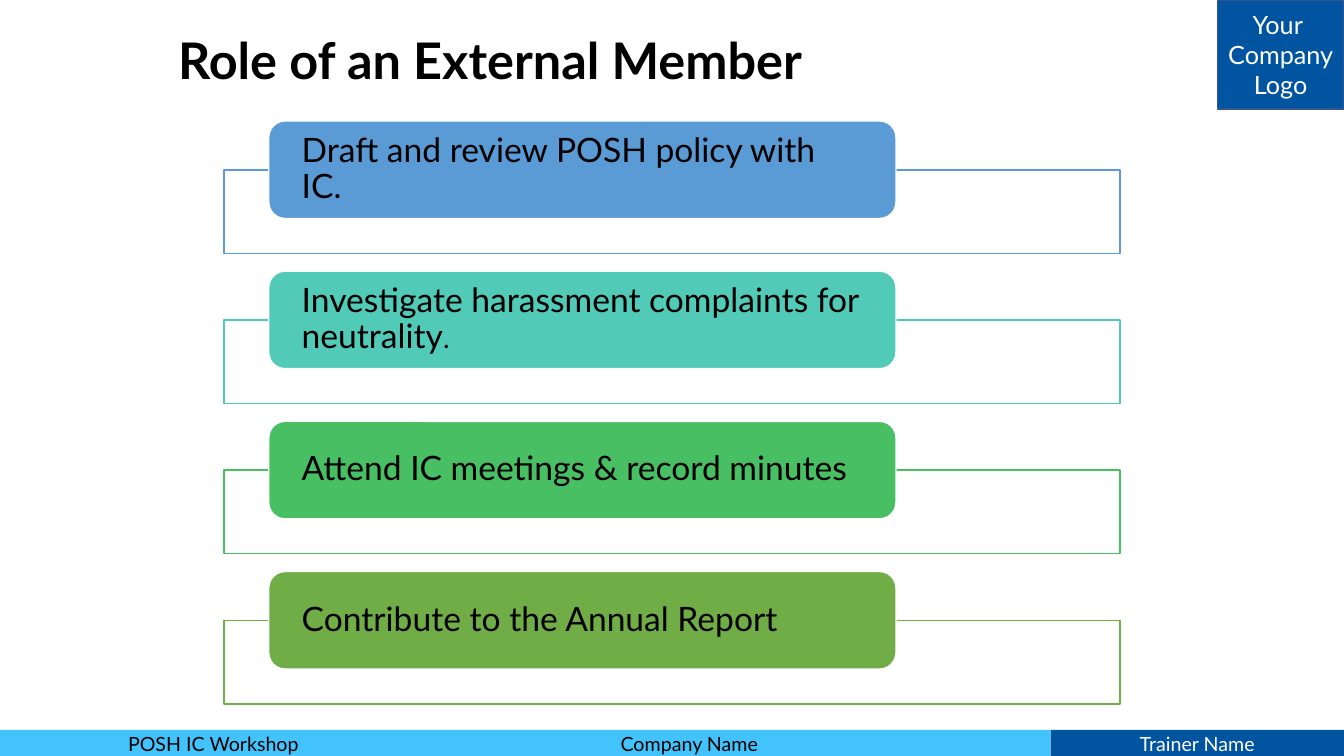
from dataclasses import dataclass

from pptx import Presentation
from pptx.dml.color import RGBColor
from pptx.enum.shapes import MSO_SHAPE
from pptx.enum.text import MSO_ANCHOR, PP_ALIGN
from pptx.util import Inches, Pt

# Grid: 12 columns by 30 rows
WIDE, HIGH = Inches(13.33), Inches(7.5)
COL, ROW = WIDE / 12, HIGH / 30


@dataclass(frozen=True)
class Theme:
    font: str = "Lato"
    black: str = "000000"
    white: str = "FFFFFF"
    navy: str = "01549F"
    edge: str = "325491"
    sky: str = "42C3FB"
    title: int = 36
    body: int = 24
    stop: int = 20
    logo: int = 18
    foot: int = 14


LOOK = Theme()

ROLES = [
    ("Draft and review POSH policy with IC.", "5B9BD5"),
    ([("Investigate harassment complaints for neutrality", LOOK.body),
      (".", LOOK.stop)], "52CAB8"),
    ("Attend IC meetings & record minutes", "49BF64"),
    ("Contribute to the Annual Report", "70AD47"),
]

# Start column, width in columns, text, left inset in inches, fill, ink
FOOTER = [
    (0, 4.92, "POSH IC Workshop", 1.27, LOOK.sky, LOOK.black),
    (4.92, 4.46, "Company Name", 0.69, LOOK.sky, LOOK.black),
    (9.38, 2.62, "Trainer Name", None, LOOK.navy, LOOK.white),
]


def grid(col, row, cols, rows):
    return [round(n) for n in (col * COL, row * ROW, cols * COL, rows * ROW)]


def write(shape, *lines, size, ink=LOOK.black, bold=False,
          align=PP_ALIGN.LEFT, inset=(0.1, 0.05, 0.1, 0.05), space=None):
    """Each line is a string, or a list of (string, size) pairs."""
    frame = shape.text_frame
    frame.word_wrap = True
    frame.vertical_anchor = MSO_ANCHOR.MIDDLE
    (frame.margin_left, frame.margin_top,
     frame.margin_right, frame.margin_bottom) = map(Inches, inset)
    for i, line in enumerate(lines):
        para = frame.add_paragraph() if i else frame.paragraphs[0]
        para.alignment = align
        para.line_spacing = space
        pairs = [(line, size)] if isinstance(line, str) else line
        for words, points in pairs:
            run = para.add_run()
            run.text = words
            run.font.name = LOOK.font
            run.font.size = Pt(points)
            run.font.bold = bold
            run.font.color.rgb = RGBColor.from_string(ink)


def block(slide, place, fill, line=None, kind=MSO_SHAPE.RECTANGLE):
    shape = slide.shapes.add_shape(kind, *place)
    shape.shadow.inherit = False
    shape.fill.solid()
    shape.fill.fore_color.rgb = RGBColor.from_string(fill)
    if line:
        shape.line.color.rgb = RGBColor.from_string(line)
        shape.line.width = Pt(1)
    else:
        shape.line.fill.background()
    return shape


def role(slide, row, words, hue):
    block(slide, grid(2, row + 1.94, 8, 3.32), LOOK.white, hue)
    pill = block(slide, grid(2.4, row, 5.6, 3.87), hue, LOOK.white,
                 MSO_SHAPE.ROUNDED_RECTANGLE)
    write(pill, words, size=LOOK.body, inset=(0.28, 0, 0.28, 0), space=0.9)


def main():
    deck = Presentation()
    deck.slide_width, deck.slide_height = WIDE, HIGH
    slide = deck.slides.add_slide(deck.slide_layouts[5])

    # Title
    title = slide.shapes.title
    title.left, title.top, title.width, title.height = grid(
        1.59, 1.12, 9.79, 2.48)
    write(title, "Role of an External Member", size=LOOK.title, bold=True,
          inset=(0, 0.07, 0, 0), space=0.9)

    # Logo box
    logo = block(slide, grid(10.87, 0, 1.13, 4.32), LOOK.navy, LOOK.edge)
    write(logo, "Your ", "Company", "Logo", size=LOOK.logo, ink=LOOK.white,
          align=PP_ALIGN.CENTER)

    # Roles, evenly stacked
    for i, (words, hue) in enumerate(ROLES):
        role(slide, 4.8 + i * 5.96, words, hue)

    # Footer bar
    for col, cols, words, left, fill, ink in FOOTER:
        bar = block(slide, grid(col, 28.96, cols, 1.1), fill)
        write(bar, words, size=LOOK.foot, ink=ink,
              align=PP_ALIGN.LEFT if left else PP_ALIGN.CENTER,
              inset=(left or 0.1, 0.04, 0.1, 0.04))

    deck.save("out.pptx")


if __name__ == "__main__":
    main()
